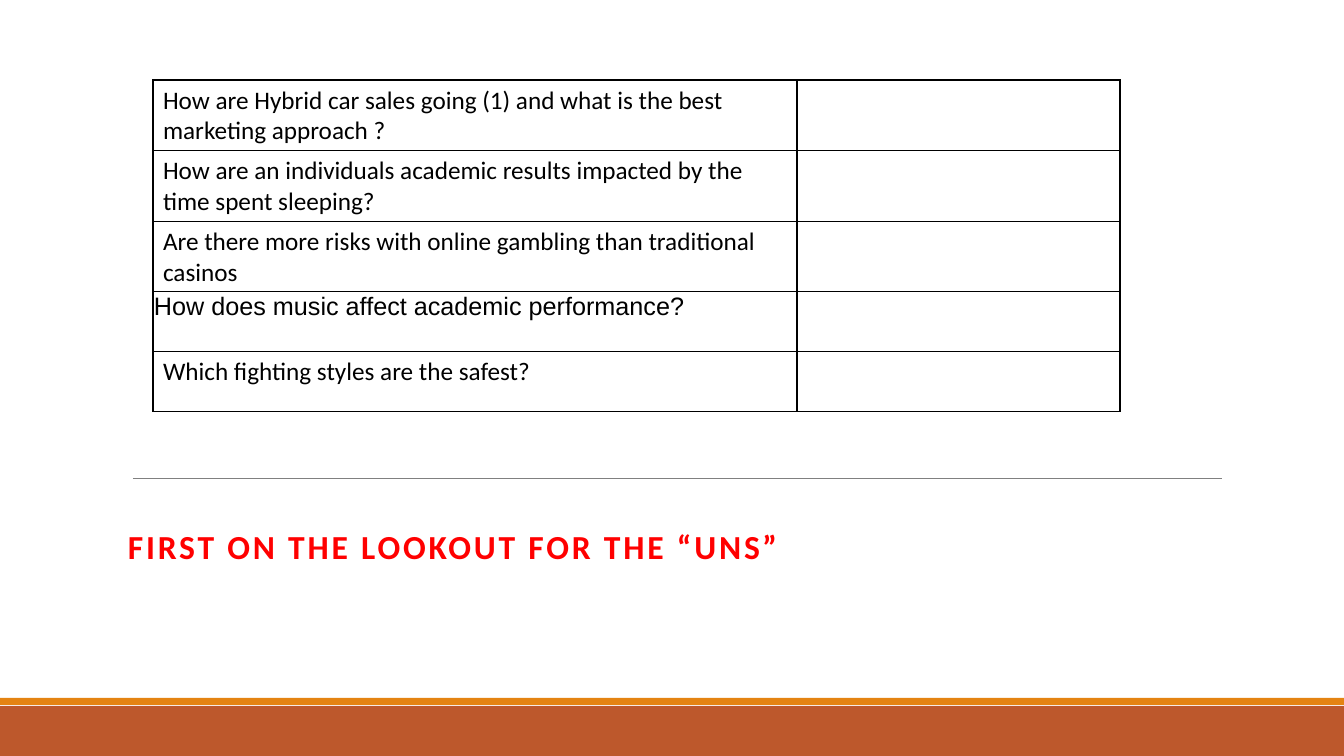
from lxml import etree
from pptx import Presentation
from pptx import util as u
from pptx.dml.color import RGBColor
from pptx.enum import shapes, text
from pptx.oxml import parse_xml
from pptx.oxml.ns import nsdecls, qn

PX = 914400 / 100.8
HUES = {"rust": "BD582C", "amber": "E48312", "gray": "808080",
        "red": "FF0000", "black": "000000"}
ASKS = [
    "How are Hybrid car sales going (1) and what is the best marketing approach ?",
    "How are an individuals academic results impacted by the time spent sleeping?",
    "Are there more risks with online gambling than traditional casinos",
    "How does music affect academic performance?",
    "Which fighting styles are the safest?",
]
MUSIC = 3


def px(n):
    return u.Emu(round(n * PX))


def hue(name):
    return RGBColor.from_string(HUES[name])


def write(frame, words, size=18, font="Calibri", color="black", bold=False,
          track=0, lead=None, before=None, after=None):
    """Put words in the first paragraph; track is letter spacing in points."""
    para = frame.paragraphs[0]
    para.line_spacing = lead
    para.space_before, para.space_after = before, after
    run = para.add_run()
    run.text = words
    run.font.size, run.font.name, run.font.bold = u.Pt(size), font, bold
    run.font.color.rgb = hue(color)
    if track:
        run.font._element.set("spc", str(track * 100))


class Deck:
    def __init__(self):
        self.show = Presentation()
        self.show.slide_width, self.show.slide_height = px(1344), px(756)
        self.slide = self.show.slides.add_slide(self.show.slide_layouts[6])

    def bar(self, x, y, w, h, color):
        box = self.slide.shapes.add_shape(shapes.MSO_SHAPE.RECTANGLE,
                                          px(x), px(y), px(w), px(h))
        box.shadow.inherit = False
        box.fill.solid()
        box.fill.fore_color.rgb = hue(color)
        box.line.fill.background()

    def rule(self, x, y, end, color):
        line = self.slide.shapes.add_connector(shapes.MSO_CONNECTOR.STRAIGHT,
                                               px(x), px(y), px(end), px(y))
        line.line.color.rgb = hue(color)
        line.line.width = u.Pt(0.5)
        etree.SubElement(line._element.spPr, qn("a:effectLst"))

    def label(self, x, y, w, h, words, **style):
        box = self.slide.shapes.add_textbox(px(x), px(y), px(w), px(h))
        frame = box.text_frame
        frame.word_wrap = True
        frame.vertical_anchor = text.MSO_ANCHOR.TOP
        write(frame, words, **style)

    def edge(self, cell, color):
        """Draw all four borders of a cell, which has no fill."""
        cell.fill.background()
        props = cell._tc.get_or_add_tcPr()
        for spot, side in enumerate("LRTB"):
            props.insert(spot, parse_xml(
                f'<a:ln{side} {nsdecls("a")} w="12700"><a:solidFill>'
                f'<a:srgbClr val="{HUES[color]}"/></a:solidFill></a:ln{side}>'))

    def grid(self, x, y, cols, high, asks):
        frame = self.slide.shapes.add_table(
            len(asks), len(cols), px(x), px(y),
            px(sum(cols)), px(high * len(asks)))
        table = frame.table
        table.first_row = table.horz_banding = False
        for col, wide in zip(table.columns, cols):
            col.width = px(wide)
        for num, ask in enumerate(asks):
            table.rows[num].height = px(high)
            for cell in table.rows[num].cells:
                self.edge(cell, "black")
            first = table.cell(num, 0)
            if num == MUSIC:
                first.margin_left = first.margin_right = first.margin_top = px(1)
                first.margin_bottom = 0
            write(first.text_frame, ask,
                  font="Arial" if num == MUSIC else "Calibri")


def main():
    deck = Deck()
    deck.bar(0, 706, 1344, 50, "rust")
    deck.bar(0, 698, 1344, 7, "amber")
    deck.rule(133, 478, 1222, "gray")
    deck.label(118, 525, 1109, 126, "FIRST ON THE LOOKOUT FOR THE “UNS”",
               size=24, color="red", bold=True, track=2, lead=0.9,
               before=u.Pt(12), after=u.Pt(2))
    deck.grid(153, 80, [644, 323], 60, ASKS)
    deck.show.save("out.pptx")


if __name__ == "__main__":
    main()
